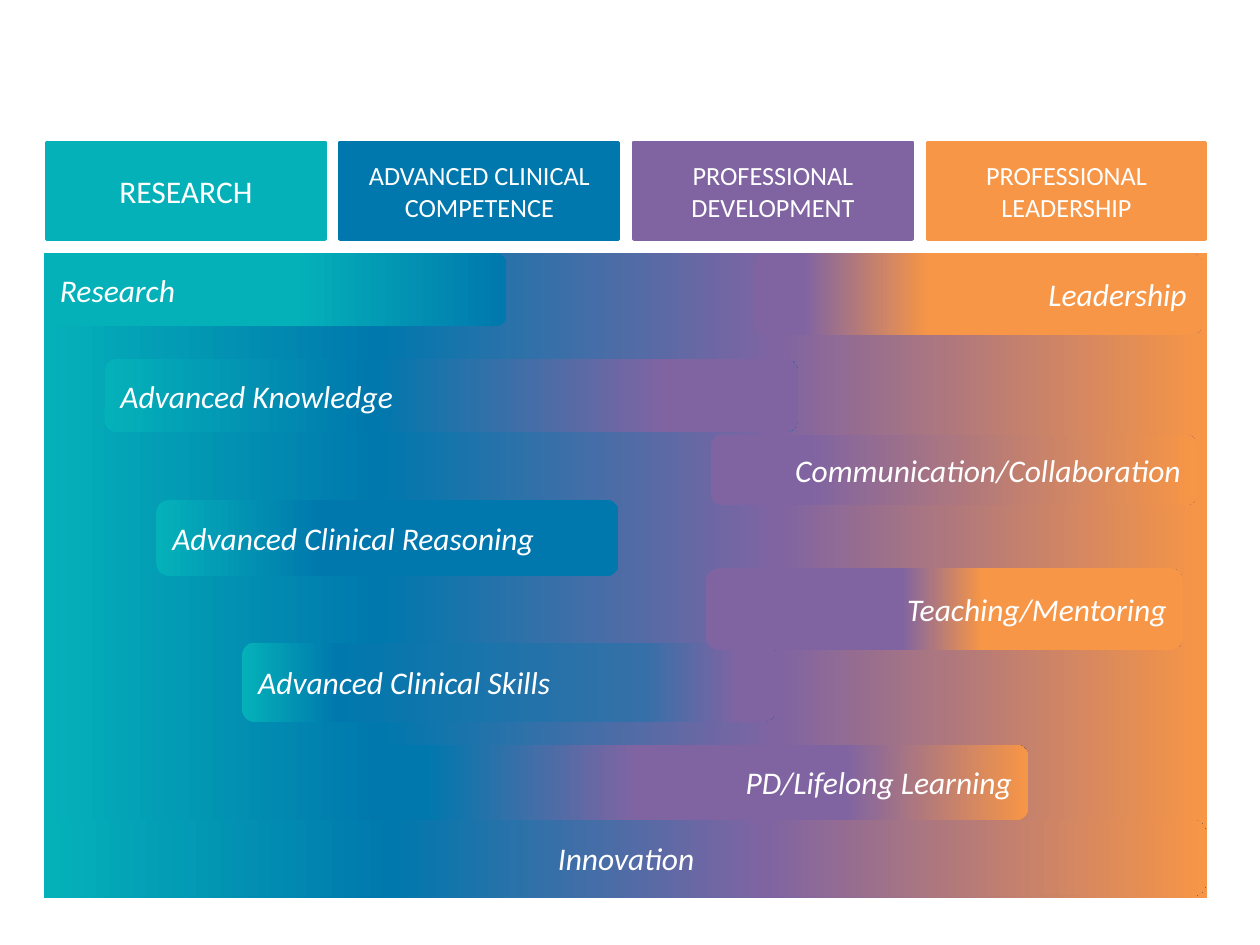
"""Build a slide that maps skills across four professional pillars."""
from pptx import Presentation
from pptx.dml.color import RGBColor
from pptx.enum.shapes import MSO_SHAPE
from pptx.enum.text import MSO_ANCHOR, PP_ALIGN
from pptx.oxml.ns import qn
from pptx.util import Inches, Pt
from lxml.etree import SubElement

COLORS = {
    "teal": "04B1B9",
    "blue": "0078AD",
    "steel": "3570A8",
    "purple": "8064A2",
    "orange": "F79646",
    "white": "FFFFFF",
}
ALIGNMENTS = {"left": PP_ALIGN.LEFT, "center": PP_ALIGN.CENTER, "right": PP_ALIGN.RIGHT}

BACKDROP = (0.35, 2.01, 9.23, 5.12)
BACKDROP_STOPS = [(0, "teal"), (29, "blue"), (63, "purple"), (100, "orange")]

PILLARS = [
    ("RESEARCH", "teal", 18),
    ("ADVANCED CLINICAL COMPETENCE", "blue", 15),
    ("PROFESSIONAL DEVELOPMENT", "purple", 15),
    ("PROFESSIONAL LEADERSHIP", "orange", 15),
]
PILLAR_LEFT, PILLAR_TOP, PILLAR_PITCH = 0.37, 1.13, 2.33
PILLAR_WIDTH, PILLAR_HEIGHT = 2.21, 0.77

SKILLS = [
    ("Advanced Clinical Reasoning", "left", (1.24, 3.97, 3.67, 0.6),
     [(0, "teal"), (36, "blue"), (100, "blue")]),
    ("Advanced Knowledge", "left", (0.83, 2.85, 5.5, 0.58),
     [(0, "teal"), (39, "blue"), (81, "purple")]),
    ("Advanced Clinical Skills", "left", (1.92, 5.1, 4.24, 0.63),
     [(0, "teal"), (18, "blue"), (75, "steel"), (93, "purple")]),
    ("Research", "left", (0.35, 2.01, 3.67, 0.58),
     [(0, "teal"), (54, "teal"), (100, "blue")]),
    ("PD/Lifelong Learning", "right", (2.97, 5.91, 5.19, 0.6),
     [(8, "blue"), (40, "purple"), (72, "purple"), (100, "orange")]),
    ("Communication/Collaboration", "right", (5.64, 3.45, 3.86, 0.56),
     [(0, "purple"), (20, "purple"), (100, "orange")]),
    ("Teaching/Mentoring", "right", (5.6, 4.51, 3.79, 0.65),
     [(0, "purple"), (41, "purple"), (58, "orange")]),
    ("Innovation", "center", (0.37, 6.51, 9.2, 0.6),
     [(0, "teal"), (30, "blue"), (62, "purple"), (100, "orange")]),
    ("Leadership", "right", (5.98, 2.01, 3.57, 0.65),
     [(0, "purple"), (11, "purple"), (39, "orange")]),
]


def color(name):
    return RGBColor.from_string(COLORS[name])


def add_box(slide, kind, box):
    shape = slide.shapes.add_shape(kind, *map(Inches, box))
    shape.shadow.inherit = False
    return shape


def fill_gradient(shape, stops):
    shape.line.fill.background()
    shape.fill.gradient()
    shape.fill.gradient_angle = 0
    stop_list = shape._element.spPr.find(qn("a:gradFill")).find(qn("a:gsLst"))
    for stop in list(stop_list):
        stop_list.remove(stop)
    for position, name in stops:
        stop = SubElement(stop_list, qn("a:gs"), pos=str(position * 1000))
        SubElement(stop, qn("a:srgbClr"), val=COLORS[name])


def write_label(shape, text, alignment, size, italic):
    shape.text_frame.word_wrap = True
    shape.text_frame.vertical_anchor = MSO_ANCHOR.MIDDLE
    paragraph = shape.text_frame.paragraphs[0]
    paragraph.alignment = ALIGNMENTS[alignment]
    run = paragraph.add_run()
    run.text = text
    run.font.color.rgb = color("white")
    formats = {"name": "Calibri", "size": Pt(size), "italic": italic}
    for attribute, value in formats.items():
        setattr(run.font, attribute, value)


def main():
    presentation = Presentation()
    presentation.slide_width, presentation.slide_height = Inches(10), Inches(7.5)
    slide = presentation.slides.add_slide(presentation.slide_layouts[6])

    fill_gradient(add_box(slide, MSO_SHAPE.RECTANGLE, BACKDROP), BACKDROP_STOPS)

    for column, (text, name, size) in enumerate(PILLARS):
        left = PILLAR_LEFT + column * PILLAR_PITCH
        box = (left, PILLAR_TOP, PILLAR_WIDTH, PILLAR_HEIGHT)
        shape = add_box(slide, MSO_SHAPE.RECTANGLE, box)
        shape.fill.solid()
        shape.fill.fore_color.rgb = color(name)
        shape.line.color.rgb = color(name)
        shape.line.width = Pt(2)
        write_label(shape, text, "center", size, False)

    for text, alignment, box, stops in SKILLS:
        shape = add_box(slide, MSO_SHAPE.ROUNDED_RECTANGLE, box)
        fill_gradient(shape, stops)
        write_label(shape, text, alignment, 18, True)

    presentation.save("out.pptx")


if __name__ == "__main__":
    main()
